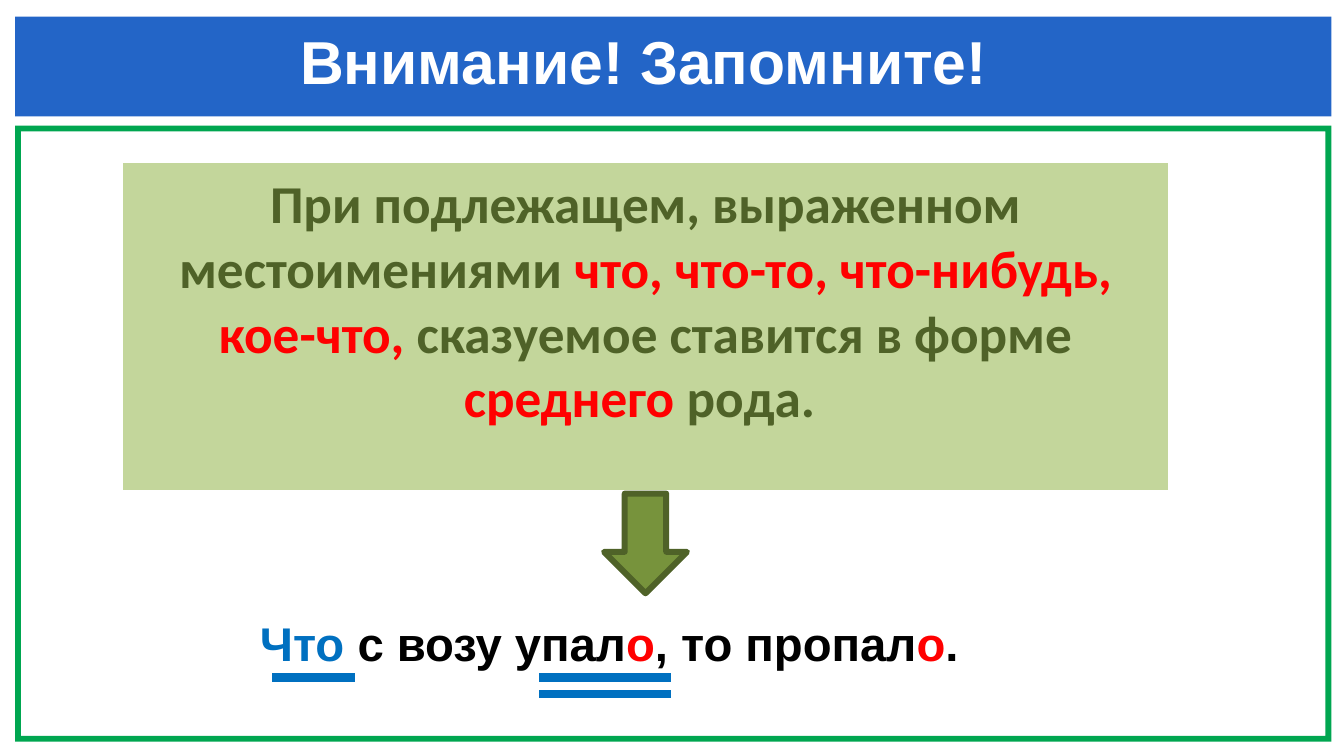
"""Build a grammar slide on predicate agreement with the pronoun «что»."""
from lxml.etree import SubElement
from pptx import Presentation
from pptx.dml.color import RGBColor
from pptx.enum.shapes import MSO_CONNECTOR as Connector, MSO_SHAPE as Preset
from pptx.enum.text import MSO_ANCHOR as Anchor, MSO_AUTO_SIZE as AutoSize, PP_ALIGN as Align
from pptx.oxml.ns import qn
from pptx.util import Cm, Pt

WHITE, BLACK, RED, BLUE = "FFFFFF", "000000", "FF0000", "0070C0"
GREEN, BAND_BLUE = "00A650", "2365C7"
OLIVE, OLIVE_MID, OLIVE_PALE = "4F6228", "77933C", "C3D69B"

TITLE = [("Внимание! Запомните!", WHITE)]
RULE = [
    ("При подлежащем, выраженном местоимениями ", OLIVE),
    ("что, что-то, что-нибудь, кое-что,", RED),
    (" сказуемое ставится в форме ", OLIVE),
    ("среднего", RED),
    (" рода. ", OLIVE),
]
EXAMPLE = [
    ("Что ", BLUE),
    ("с возу упал", BLACK),
    ("о", RED),
    (", то пропал", BLACK),
    ("о", RED),
    (".", BLACK),
]

BAND_BOX = (0.18, 0.2, 15.7, 1.19)
FRAME_BOX = (0.18, 1.5, 15.7, 7.35)
FRAME_WIDTH = 0.07
TITLE_BOX = (0.84, 0.28, 14.35, 0.89)
EXAMPLE_BOX = (2.64, 6.68, 12.5, 1.37)
RULE_BOX = (1.45, 1.93, 12.5, 3.96)
ARROW_SIZE = (0.99, 1.19)
UNDERLINES = [(3.25, 4.24, 8.08), (6.43, 8.0, 8.08), (6.43, 8.0, 8.28)]
RULE_BORDERS = {"lnL": 1, "lnR": 1, "lnT": 1, "lnB": 3}


def color(code):
    return RGBColor.from_string(code)


def lengths(box):
    return [Cm(value) for value in box]


def write(para, pieces, size, font):
    for text, code in pieces:
        span = para.add_run()
        span.text = text
        span.font.name, span.font.size, span.font.bold = font, Pt(size), True
        span.font.color.rgb = color(code)


def add_preset(page, preset, box, fill):
    shape = page.shapes.add_shape(preset, *lengths(box))
    shape.shadow.inherit = False
    shape.fill.solid()
    shape.fill.fore_color.rgb = color(fill)
    shape.line.fill.background()
    return shape


def fill_placeholder(page, holder, box, pieces, size, indent, drop=0):
    holder.left, holder.top, holder.width, holder.height = lengths(box)
    frame = holder.text_frame
    frame.auto_size, frame.vertical_anchor = AutoSize.NONE, Anchor.TOP
    frame.margin_left, frame.margin_top = Cm(indent), Cm(drop)
    frame.margin_right = frame.margin_bottom = 0
    para = frame.paragraphs[0]
    para.alignment, para.space_before = Align.LEFT, Pt(0)
    write(para, pieces, size, "Arial")
    settings = para._p.get_or_add_pPr()
    settings.set("marL", "0")
    settings.set("indent", "0")
    SubElement(settings, qn("a:buNone"))
    page.shapes.element.append(holder.element)


def add_rule(page):
    table = page.shapes.add_table(1, 1, *lengths(RULE_BOX)).table
    cell = table.cell(0, 0)
    borders = cell._tc.get_or_add_tcPr()
    for side, width in RULE_BORDERS.items():
        line = SubElement(borders, qn(f"a:{side}"), w=str(Pt(width)))
        SubElement(SubElement(line, qn("a:solidFill")), qn("a:srgbClr"), val=WHITE)
    cell.fill.solid()
    cell.fill.fore_color.rgb = color(OLIVE_PALE)
    para = cell.text_frame.paragraphs[0]
    para.alignment = Align.CENTER
    write(para, RULE, 18, "Calibri")


def add_arrow(page):
    left, top, width, height = RULE_BOX
    arrow_width, arrow_height = ARROW_SIZE
    box = (left + (width - arrow_width) / 2, top + height, arrow_width, arrow_height)
    arrow = add_preset(page, Preset.DOWN_ARROW, box, OLIVE_MID)
    arrow.line.color.rgb = color(OLIVE)
    arrow.line.width = Pt(2)


def add_underline(page, start, end, level):
    line = page.shapes.add_connector(Connector.STRAIGHT, *lengths((start, level, end, level)))
    line.line.color.rgb = color(BLUE)
    line.line.width = Pt(3)
    SubElement(line.element.spPr, qn("a:effectLst"))


def main():
    deck = Presentation()
    deck.slide_width, deck.slide_height = Cm(16.03), Cm(9.02)
    page = deck.slides.add_slide(deck.slide_layouts[1])
    title, body = page.placeholders
    frame = add_preset(page, Preset.FRAME, FRAME_BOX, GREEN)
    frame.adjustments[0] = FRAME_WIDTH / FRAME_BOX[3]
    add_preset(page, Preset.RECTANGLE, BAND_BOX, BAND_BLUE)
    fill_placeholder(page, title, TITLE_BOX, TITLE, 20.5, indent=2.74)
    fill_placeholder(page, body, EXAMPLE_BOX, EXAMPLE, 16, indent=0.46, drop=0.65)
    add_rule(page)
    add_arrow(page)
    for underline in UNDERLINES:
        add_underline(page, *underline)
    deck.save("out.pptx")


if __name__ == "__main__":
    main()
